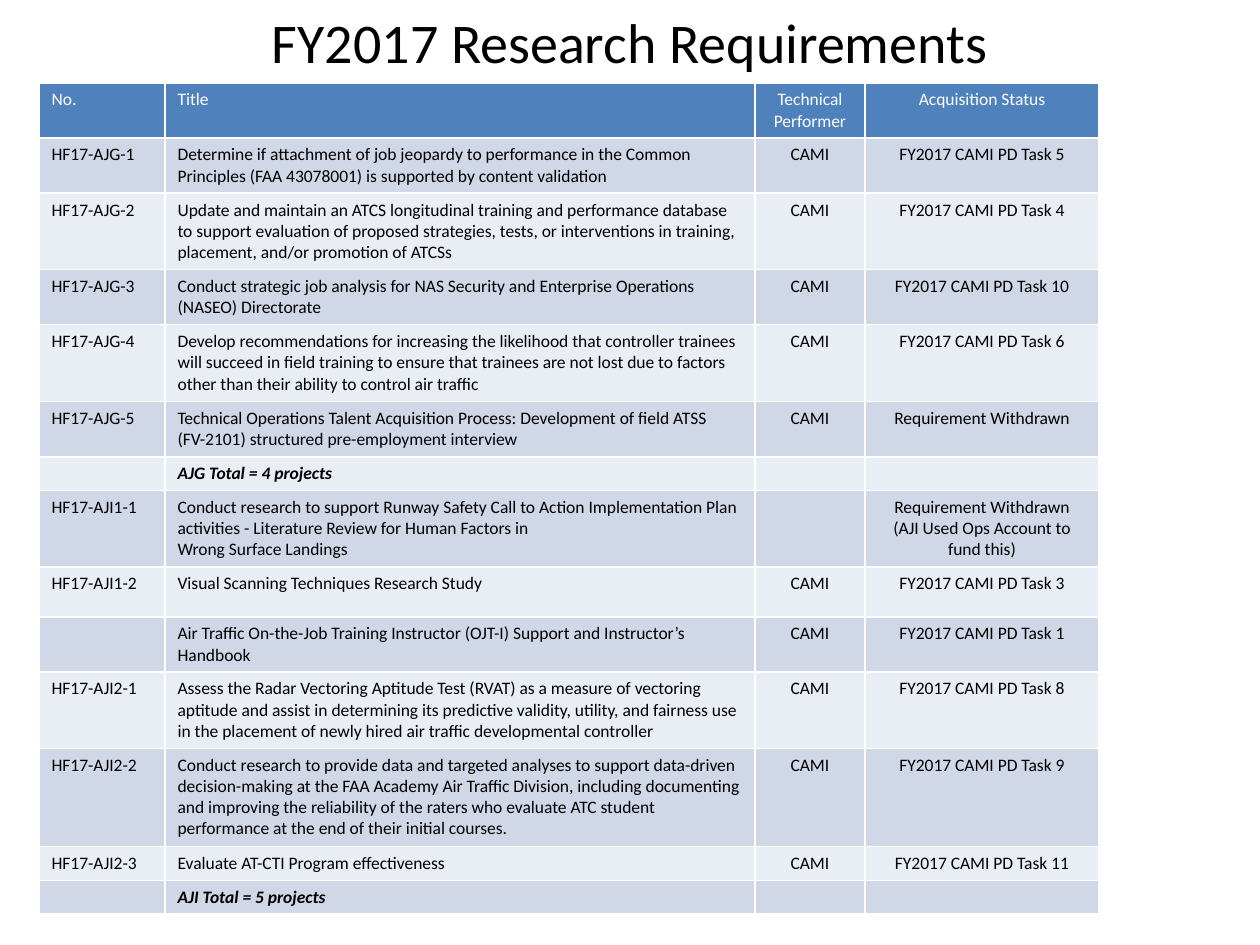
from lxml.etree import SubElement
from pptx import Presentation
from pptx.dml.color import RGBColor
from pptx.enum.text import MSO_ANCHOR, MSO_AUTO_SIZE, PP_ALIGN
from pptx.oxml.ns import qn
from pptx.util import Emu, Pt

PX_PER_INCH = 126
WHITE = RGBColor(0xFF, 0xFF, 0xFF)
BLACK = RGBColor(0x00, 0x00, 0x00)
HEADER_BLUE = RGBColor(0x4F, 0x81, 0xBD)
BANDS = (RGBColor(0xE9, 0xED, 0xF4), RGBColor(0xD0, 0xD8, 0xE8))

HEADINGS = ("No.", "Title", "Technical Performer", "Acquisition Status")
COLUMN_WIDTHS = (126, 590, 110, 234)
CENTERED_COLUMNS = (2, 3)
TASK = "FY2017 CAMI PD Task "

# Row height, number, title, performer, status
REQUIREMENTS = (
    (55, "HF17-AJG-1",
     "Determine if attachment of job jeopardy to performance in the Common "
     "Principles (FAA 43078001) is supported by content validation",
     "CAMI", TASK + "5"),
    (76, "HF17-AJG-2",
     "Update and maintain an ATCS longitudinal training and performance database "
     "to support evaluation of proposed strategies, tests, or interventions in "
     "training, placement, and/or promotion of ATCSs",
     "CAMI", TASK + "4"),
    (55, "HF17-AJG-3",
     "Conduct strategic job analysis for NAS Security and Enterprise Operations "
     "(NASEO) Directorate",
     "CAMI", TASK + "10"),
    (77, "HF17-AJG-4",
     "Develop recommendations for increasing the likelihood that controller "
     "trainees will succeed in field training to ensure that trainees are not "
     "lost due to factors other than their ability to control air traffic",
     "CAMI", TASK + "6"),
    (55, "HF17-AJG-5",
     "Technical Operations Talent Acquisition Process: Development of field ATSS "
     "(FV-2101) structured pre-employment interview",
     "CAMI", "Requirement Withdrawn"),
    (33, "", "AJG Total = 4 projects", "", ""),
    (76, "HF17-AJI1-1",
     "Conduct research to support Runway Safety Call to Action Implementation "
     "Plan activities - Literature Review for Human Factors in \v"
     "Wrong Surface Landings",
     "", "Requirement Withdrawn\n(AJI Used Ops Account to fund this)"),
    (50, "HF17-AJI1-2", "Visual Scanning Techniques Research Study",
     "CAMI", TASK + "3"),
    (55, "",
     "Air Traffic On-the-Job Training Instructor (OJT-I) Support and "
     "Instructor’s Handbook",
     "CAMI", TASK + "1"),
    (76, "HF17-AJI2-1",
     "Assess the Radar Vectoring Aptitude Test (RVAT) as a measure of vectoring "
     "aptitude and assist in determining its predictive validity, utility, and "
     "fairness use in the placement of newly hired air traffic developmental "
     "controller",
     "CAMI", TASK + "8"),
    (98, "HF17-AJI2-2",
     "Conduct research to provide data and targeted analyses to support "
     "data-driven decision-making at the FAA Academy Air Traffic Division, "
     "including documenting and improving the reliability of the raters who "
     "evaluate ATC student performance at the end of their initial courses.",
     "CAMI", TASK + "9"),
    (33, "HF17-AJI2-3", "Evaluate AT-CTI Program effectiveness",
     "CAMI", TASK + "11"),
    (33, "", "AJI Total = 5 projects", "", ""),
)


def px(length):
    return Emu(round(length * 914400 / PX_PER_INCH))


class SlideBuilder:
    font_name = "Calibri"
    title_size = 32
    table_size = 10

    def __init__(self, slide):
        self.slide = slide

    def style_runs(self, paragraph, size, color, emphasis=False):
        for run in paragraph.runs:
            font = run.font
            font.name, font.size = self.font_name, Pt(size)
            font.bold = font.italic = emphasis
            font.color.rgb = color

    def title(self, text, left, top, width, height):
        heading = self.slide.shapes.title
        heading.left, heading.top = px(left), px(top)
        heading.width, heading.height = px(width), px(height)
        frame = heading.text_frame
        frame.text = text
        frame.auto_size = MSO_AUTO_SIZE.NONE
        frame.margin_top = frame.margin_bottom = 0
        frame.vertical_anchor = MSO_ANCHOR.MIDDLE
        frame.paragraphs[0].alignment = PP_ALIGN.CENTER
        self.style_runs(frame.paragraphs[0], self.title_size, BLACK)

    def borders(self, cell):
        properties = cell._tc.get_or_add_tcPr()
        for side in "LRTB":
            line = SubElement(properties, qn(f"a:ln{side}"), w=str(Pt(1)))
            fill = SubElement(line, qn("a:solidFill"))
            SubElement(fill, qn("a:srgbClr"), val=str(WHITE))

    def cell(self, cell, text, fill, color, centered, emphasis):
        self.borders(cell)
        cell.fill.solid()
        cell.fill.fore_color.rgb = fill
        cell.text_frame.text = text
        for paragraph in cell.text_frame.paragraphs:
            paragraph.alignment = PP_ALIGN.CENTER if centered else PP_ALIGN.LEFT
            self.style_runs(paragraph, self.table_size, color, emphasis)
            if not text:  # keeps empty cells from stretching their row
                SubElement(paragraph._p, qn("a:endParaRPr"),
                           sz=str(self.table_size * 100))

    def table(self, rows, widths, left, top):
        height = sum(row[0] for row in rows)
        table = self.slide.shapes.add_table(
            len(rows), len(widths), px(left), px(top),
            px(sum(widths)), px(height)).table
        table.horz_banding = False
        for column, width in zip(table.columns, widths):
            column.width = px(width)
        for r, (row_height, *texts) in enumerate(rows):
            table.rows[r].height = px(row_height)
            header = r == 0
            for c, text in enumerate(texts):
                self.cell(table.cell(r, c), text,
                          fill=HEADER_BLUE if header else BANDS[r % 2],
                          color=WHITE if header else BLACK,
                          centered=c in CENTERED_COLUMNS,
                          emphasis="Total =" in text)


def main():
    deck = Presentation()
    deck.slide_width, deck.slide_height = px(1260), px(945)
    builder = SlideBuilder(deck.slides.add_slide(deck.slide_layouts[5]))

    # Title, clear of the table below it
    builder.title("FY2017 Research Requirements", 63, 2, 1134, 78)

    # Requirements table
    builder.table(((55, *HEADINGS), *REQUIREMENTS), COLUMN_WIDTHS, 39, 83)

    deck.save("out.pptx")


if __name__ == "__main__":
    main()
